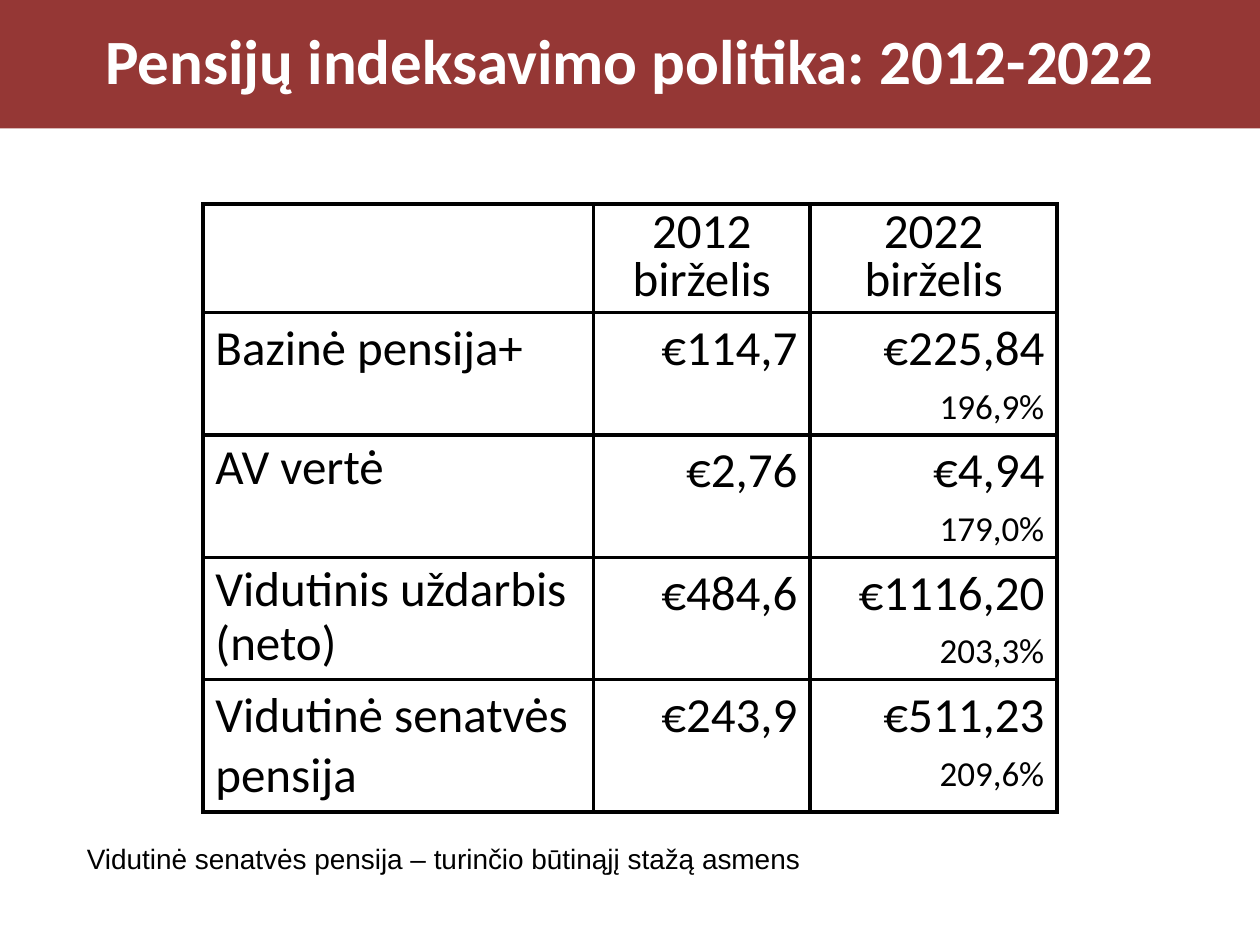
from lxml import etree
from pptx import Presentation
from pptx.dml.color import RGBColor
from pptx.enum.text import MSO_ANCHOR, MSO_AUTO_SIZE, PP_ALIGN
from pptx.oxml.ns import qn
from pptx.util import Inches, Pt

LEFT, CENTER, RIGHT = PP_ALIGN.LEFT, PP_ALIGN.CENTER, PP_ALIGN.RIGHT
MIDDLE = MSO_ANCHOR.MIDDLE
NO_FIT, GROW = MSO_AUTO_SIZE.NONE, MSO_AUTO_SIZE.SHAPE_TO_FIT_TEXT
BLACK, WHITE, RED = "000000", "FFFFFF", "953735"

COL_WIDTHS = [3.1, 1.72, 1.96]
ROW_HEIGHTS = [0.86, 0.97, 0.97, 0.97, 1.05]
HEADINGS = ["", "2012\nbirželis", "2022\nbirželis"]
# label, label line spacing, 2012 value, 2022 value, 2022 as share of 2012
PENSIONS = [
    ("Bazinė pensija+", None, "€114,7", "€225,84", "196,9%"),
    ("AV vertė", 0.9, "€2,76", "€4,94", "179,0%"),
    ("Vidutinis uždarbis (neto)", 0.9, "€484,6", "€1116,20", "203,3%"),
    ("Vidutinė senatvės pensija", None, "€243,9", "€511,23", "209,6%"),
]


def rgb(value):
    return RGBColor.from_string(value)


def place(sp, box):
    sp.left, sp.top, sp.width, sp.height = map(Inches, box)


def format_paragraph(p, size, color=BLACK, font="Calibri", align=LEFT,
                     spacing=None, bold=False):
    p.alignment = align
    if spacing:
        p.line_spacing = spacing
    for r in p.runs:
        r.font.size, r.font.name, r.font.bold = Pt(size), font, bold
        r.font.color.rgb = rgb(color)


def space_before(p, percent):
    """Set the space before as a share of the line, after any line spacing."""
    before = etree.SubElement(p._p.get_or_add_pPr(), qn("a:spcBef"))
    etree.SubElement(before, qn("a:spcPct"), val=str(percent * 1000))


def add_borders(cell, color, width):
    tcPr = cell._tc.get_or_add_tcPr()
    for side in ("lnL", "lnR", "lnT", "lnB"):
        ln = etree.SubElement(tcPr, qn(f"a:{side}"), w=str(Pt(width)))
        fill = etree.SubElement(ln, qn("a:solidFill"))
        etree.SubElement(fill, qn("a:srgbClr"), val=color)


def fill_cell(cell, text, align, spacing=None, before=0):
    """Write the lines of a cell; a percentage line is set smaller."""
    add_borders(cell, BLACK, 2.25)
    cell.fill.background()
    cell.text_frame.text = text
    for p in cell.text_frame.paragraphs:
        size = 20 if p.text.endswith("%") else 28
        format_paragraph(p, size, align=align, spacing=spacing)
        if before:
            space_before(p, before)


def add_title(slide, box):
    sp = slide.shapes.title
    place(sp, box)
    sp.fill.solid()
    sp.fill.fore_color.rgb = rgb(RED)
    tf = sp.text_frame
    tf.text = "Pensijų indeksavimo politika: 2012-2022"
    tf.auto_size, tf.vertical_anchor = NO_FIT, MIDDLE
    format_paragraph(tf.paragraphs[0], 36, WHITE, align=CENTER, spacing=0.9,
                     bold=True)


def add_pension_table(slide, left, top):
    frame = slide.shapes.add_table(
        len(ROW_HEIGHTS), len(COL_WIDTHS), Inches(left), Inches(top),
        Inches(sum(COL_WIDTHS)), Inches(sum(ROW_HEIGHTS)))
    table = frame.table
    table.first_row = table.horz_banding = False
    for column, width in zip(table.columns, COL_WIDTHS):
        column.width = Inches(width)
    for row, height in zip(table.rows, ROW_HEIGHTS):
        row.height = Inches(height)
    for col, heading in enumerate(HEADINGS):
        fill_cell(table.cell(0, col), heading, CENTER, spacing=0.8)
    for row, (label, spacing, old, new, share) in enumerate(PENSIONS, 1):
        fill_cell(table.cell(row, 0), label, LEFT, spacing, before=20)
        fill_cell(table.cell(row, 1), old, RIGHT, before=20)
        fill_cell(table.cell(row, 2), f"{new}\n{share}", RIGHT, before=20)


def add_footnote(slide, box):
    tf = slide.shapes.add_textbox(*map(Inches, box)).text_frame
    tf.word_wrap, tf.auto_size = True, GROW
    tf.text = "Vidutinė senatvės pensija – turinčio būtinąjį stažą asmens"
    format_paragraph(tf.paragraphs[0], 16, font="Arial")


def main():
    prs = Presentation()
    width, height = 10, 7.5
    prs.slide_width, prs.slide_height = Inches(width), Inches(height)
    slide = prs.slides.add_slide(prs.slide_layouts[5])
    add_title(slide, (0, 0, width, 1.02))
    add_pension_table(slide, (width - sum(COL_WIDTHS)) / 2, 1.62)
    add_footnote(slide, (0.59, 6.63, width - 2 * 0.59, 0.37))
    prs.save("out.pptx")


if __name__ == "__main__":
    main()
